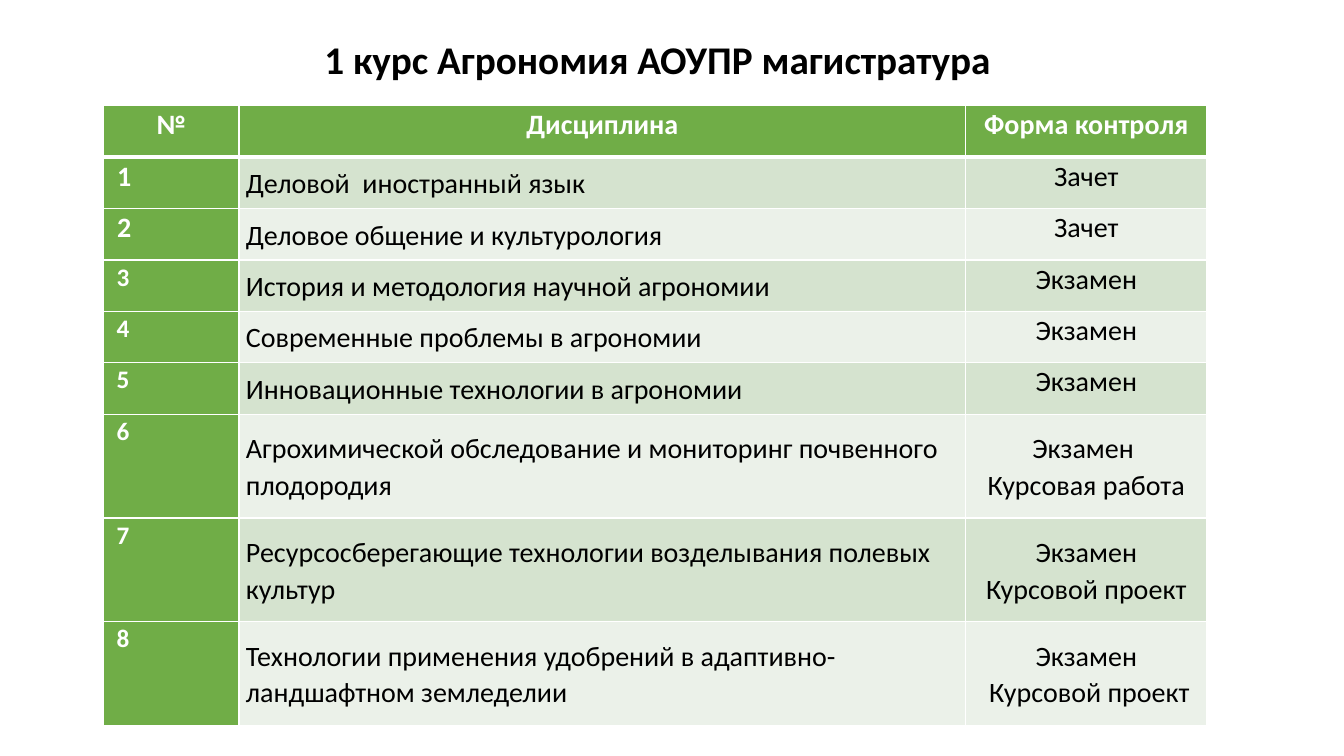
"""Builds the slide with the first-year master's course table."""
from dataclasses import dataclass

from lxml import etree
from pptx import Presentation
from pptx.dml.color import RGBColor
from pptx.enum.text import MSO_ANCHOR, MSO_AUTO_SIZE, PP_ALIGN
from pptx.oxml.ns import qn
from pptx.util import Inches, Pt

LEFT, CENTER = PP_ALIGN.LEFT, PP_ALIGN.CENTER
TOP, MIDDLE = MSO_ANCHOR.TOP, MSO_ANCHOR.MIDDLE
NO_AUTOFIT = MSO_AUTO_SIZE.NONE

TITLE = "1 курс Агрономия АОУПР магистратура"
HEADERS = ("№", "Дисциплина", "Форма контроля")
COURSES = [
    ("Деловой  иностранный язык", ["Зачет"]),
    ("Деловое общение и культурология", ["Зачет"]),
    ("История и методология научной агрономии", ["Экзамен"]),
    ("Современные проблемы в агрономии", ["Экзамен"]),
    ("Инновационные технологии в агрономии", ["Экзамен"]),
    ("Агрохимической обследование и мониторинг почвенного плодородия",
     ["Экзамен ", "Курсовая работа"]),
    ("Ресурсосберегающие технологии возделывания полевых культур",
     ["Экзамен", "Курсовой проект"]),
    ("Технологии применения удобрений в адаптивно-ландшафтном земледелии",
     ["Экзамен", " Курсовой проект"]),
]
TITLE_BOX = (0.77, 0.35, 11.5, 0.7)
TABLE_ORIGIN = (1.03, 1.05)
COLUMN_WIDTHS = (1.34, 7.21, 2.39)
LINE_ROW_HEIGHT = 0.51
TALL_ROW_HEIGHT = 1.03
LARGE_NUMBERS = 2


@dataclass(frozen=True)
class Theme:
    """Colours, font and type sizes of the slide."""
    font: str = "Calibri"
    dark: str = "000000"
    light: str = "FFFFFF"
    accent: str = "70AD47"
    bands: tuple = ("D5E3CF", "EBF1E9")
    title_size: int = 28
    text_size: int = 20
    number_size: int = 18
    border: int = 1
    header_border: int = 3


THEME = Theme()


def add_span(para, text, size, color, bold):
    """Adds one formatted run to a paragraph."""
    span = para.add_run()
    span.text = text
    span.font.name = THEME.font
    span.font.size = Pt(size)
    span.font.bold = bold
    span.font.color.rgb = RGBColor.from_string(color)


def set_borders(cell, top, bottom):
    """Draws the four borders of a cell, with widths in points."""
    properties = cell._tc.get_or_add_tcPr()
    widths = {"a:lnL": THEME.border, "a:lnR": THEME.border, "a:lnT": top, "a:lnB": bottom}
    for tag, width in widths.items():
        line = etree.SubElement(properties, qn(tag), w=str(Pt(width)))
        fill = etree.SubElement(line, qn("a:solidFill"))
        etree.SubElement(fill, qn("a:srgbClr"), val=THEME.light)


def fill_cell(cell, lines, fill, color, size=THEME.text_size, bold=False,
              align=LEFT, anchor=TOP):
    """Writes the lines into a cell and colours it."""
    cell.fill.solid()
    cell.fill.fore_color.rgb = RGBColor.from_string(fill)
    cell.margin_left = cell.margin_right = Inches(0.07)
    cell.margin_top = cell.margin_bottom = 0
    cell.vertical_anchor = anchor
    para = cell.text_frame.paragraphs[0]
    para.alignment = align
    para.line_spacing = 1.07
    for index, text in enumerate(lines):
        if index:
            para.add_line_break()
        add_span(para, text, size, color, bold)


def add_title(page):
    """Places the slide title."""
    box = page.shapes.title
    box.left, box.top, box.width, box.height = map(Inches, TITLE_BOX)
    frame = box.text_frame
    frame.word_wrap = True
    frame.auto_size = NO_AUTOFIT
    frame.vertical_anchor = TOP
    para = frame.paragraphs[0]
    para.alignment = CENTER
    para.line_spacing = 0.9
    para.space_before = Pt(10)
    add_span(para, TITLE, THEME.title_size, THEME.dark, True)


def add_course_table(page):
    """Builds the table of courses and their forms of assessment."""
    heights = [LINE_ROW_HEIGHT] + [
        TALL_ROW_HEIGHT if len(forms) > 1 else LINE_ROW_HEIGHT for _, forms in COURSES]
    frame = page.shapes.add_table(
        len(heights), len(COLUMN_WIDTHS), *map(Inches, TABLE_ORIGIN),
        Inches(sum(COLUMN_WIDTHS)), Inches(sum(heights)))
    table = frame.table
    table.first_col = True
    for column, width in zip(table.columns, COLUMN_WIDTHS):
        column.width = Inches(width)
    for index, (row, height) in enumerate(zip(table.rows, heights)):
        row.height = Inches(height)
        top = THEME.header_border if index == 1 else THEME.border
        bottom = THEME.header_border if index == 0 else THEME.border
        for cell in row.cells:
            set_borders(cell, top, bottom)

    for column, header in enumerate(HEADERS):
        fill_cell(table.cell(0, column), [header], THEME.accent, THEME.light,
                  bold=True, align=CENTER)
    for number, (course, forms) in enumerate(COURSES, start=1):
        band = THEME.bands[(number - 1) % len(THEME.bands)]
        size = THEME.text_size if number <= LARGE_NUMBERS else THEME.number_size
        fill_cell(table.cell(number, 0), [f" {number}"], THEME.accent, THEME.light,
                  size=size, bold=True)
        fill_cell(table.cell(number, 1), [course], band, THEME.dark, anchor=MIDDLE)
        fill_cell(table.cell(number, 2), forms, band, THEME.dark, align=CENTER,
                  anchor=MIDDLE if len(forms) > 1 else TOP)


def main():
    """Creates the deck and saves it."""
    deck = Presentation()
    deck.slide_width, deck.slide_height = Inches(13.33), Inches(7.5)
    page = deck.slides.add_slide(deck.slide_layouts.get_by_name("Title Only"))
    add_title(page)
    add_course_table(page)
    deck.save("out.pptx")


if __name__ == "__main__":
    main()
